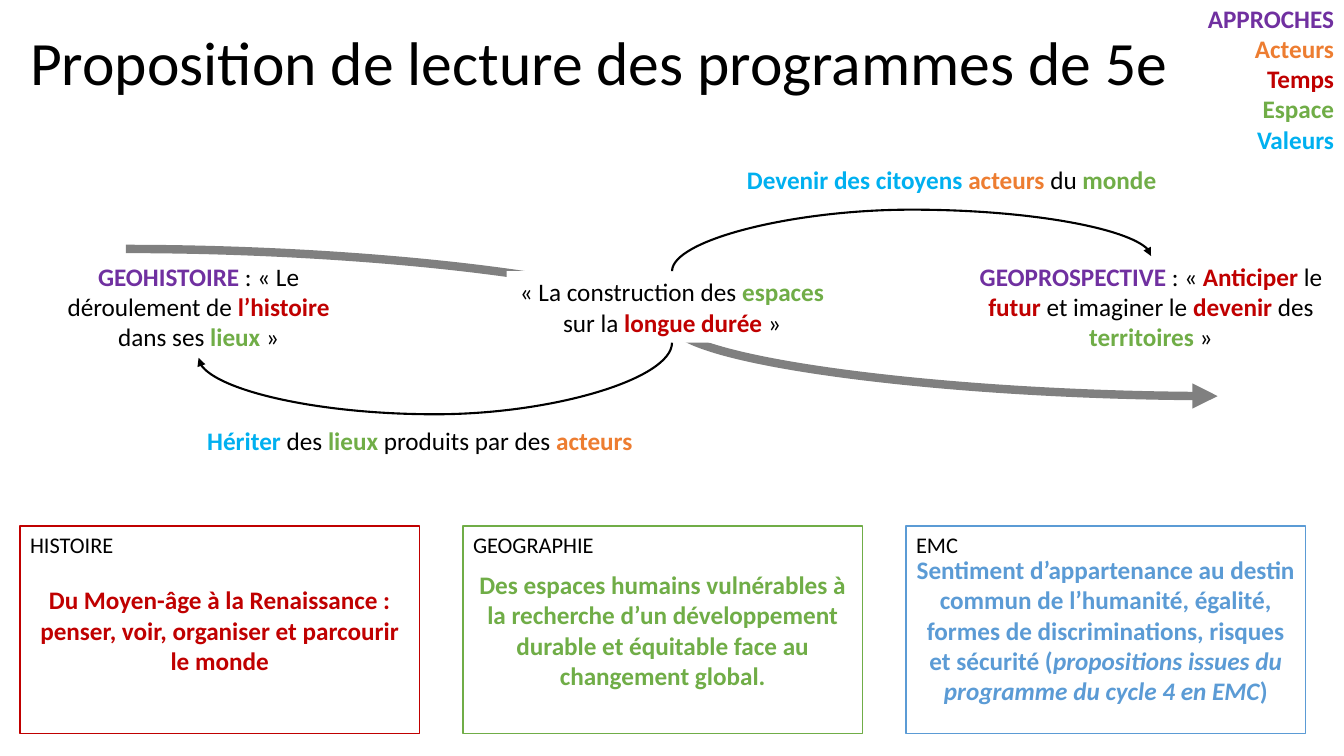
import pptx
import pptx.util
import pptx.dml.color
import pptx.enum.shapes
import pptx.enum.text
import pptx.oxml.ns
from lxml import etree

RGB = pptx.dml.color.RGBColor
BLACK = RGB(0, 0, 0)
WHITE = RGB(255, 255, 255)
GREY = RGB(0x80, 0x80, 0x80)
PURPLE = RGB(0x70, 0x30, 0xA0)
RED = RGB(0xC0, 0, 0)
GREEN = RGB(0x70, 0xAD, 0x47)
ORANGE = RGB(0xED, 0x7D, 0x31)
CYAN = RGB(0, 0xB0, 0xF0)
BLUE = RGB(0x5B, 0x9B, 0xD5)

ALIGN = pptx.enum.text.PP_ALIGN
MIDDLE = pptx.enum.text.MSO_ANCHOR.MIDDLE
TOP = pptx.enum.text.MSO_ANCHOR.TOP
RECT = pptx.enum.shapes.MSO_SHAPE.RECTANGLE
CURVE = pptx.enum.shapes.MSO_CONNECTOR.CURVE
FONT = "Calibri"
CELL = pptx.util.Inches(0.1)
COLS, ROWS = 133.33, 75

CARDS = [
    ("HISTOIRE", RED, [
        ("Du Moyen-âge à la Renaissance : penser, voir, organiser et parcourir le monde", False)]),
    ("GEOGRAPHIE", GREEN, [
        ("Des espaces humains vulnérables à la recherche d’un développement durable "
         "et équitable face au changement global.", False)]),
    ("EMC", BLUE, [
        ("Sentiment d’appartenance au destin commun de l’humanité, égalité, "
         "formes de discriminations, risques et sécurité (", False),
        ("propositions issues du programme du cycle 4 en EMC", True),
        (")", False)]),
]
THEMES = [("APPROCHES", PURPLE), ("Acteurs", ORANGE), ("Temps", RED),
          ("Espace", GREEN), ("Valeurs", CYAN)]
PAST = [("GEOHISTOIRE", PURPLE), (" : « Le déroulement de ", BLACK), ("l’histoire", RED),
        (" dans ses ", BLACK), ("lieux", GREEN), (" »", BLACK)]
NOW = [("« La construction des ", BLACK), ("espaces", GREEN), (" sur la ", BLACK),
       ("longue durée", RED), (" »", BLACK)]
NEXT = [("GEOPROSPECTIVE", PURPLE), (" : « ", BLACK), ("Anticiper", RED), (" le ", BLACK),
        ("futur", RED), (" et imaginer le ", BLACK), ("devenir", RED), (" des ", BLACK),
        ("territoires", GREEN), (" »", BLACK)]
BACK = [("Hériter", CYAN), (" des ", BLACK), ("lieux", GREEN),
        (" produits par des ", BLACK), ("acteurs", ORANGE)]
AHEAD = [("Devenir des citoyens ", CYAN), ("acteurs", ORANGE), (" du ", BLACK),
         ("monde", GREEN)]


def grid(*cells):
    """Turn grid cells into slide lengths."""
    return [round(c * CELL) for c in cells]


def style(para, size, align):
    """Set the font, size and alignment of a paragraph."""
    para.font.name = FONT
    para.font.size = pptx.util.Pt(size)
    para.alignment = align


def write(para, runs):
    """Add coloured runs, bold wherever the colour is not black."""
    for text, hue in runs:
        run = para.add_run()
        run.text = text
        run.font.color.rgb = hue
        run.font.bold = hue != BLACK


def label(slide, box, lines, size=18, align=ALIGN.CENTER, anchor=TOP):
    """Place a wrapped text box with one paragraph per line."""
    frame = slide.shapes.add_textbox(*grid(*box)).text_frame
    frame.word_wrap = True
    frame.vertical_anchor = anchor
    for i, runs in enumerate(lines):
        para = frame.add_paragraph() if i else frame.paragraphs[0]
        style(para, size, align)
        write(para, runs)
    return frame


def panel(slide, box, hue=None):
    """Place a white rectangle with an optional outline."""
    rect = slide.shapes.add_shape(RECT, *grid(*box))
    rect.shadow.inherit = False
    rect.fill.solid()
    rect.fill.fore_color.rgb = WHITE
    if hue is None:
        rect.line.fill.background()
    else:
        rect.line.color.rgb = hue
        rect.line.width = pptx.util.Pt(1)
    rect.text_frame.word_wrap = True
    return rect.text_frame


def arrow(slide, start, end, hue, width):
    """Draw a curved arrow between two grid points."""
    link = slide.shapes.add_connector(CURVE, *grid(*start, *end))
    link.line.color.rgb = hue
    link.line.width = pptx.util.Pt(width)
    qn = pptx.oxml.ns.qn
    etree.SubElement(link.line._get_or_add_ln(), qn("a:tailEnd"), type="triangle")
    etree.SubElement(link._element.spPr, qn("a:effectLst"))
    return link


def arc(slide, start, end, sag):
    """Draw a quarter-turned arrow that bulges by sag beyond its start."""
    (ax, ay), (bx, by) = start, end
    midx, midy = (ax + bx) / 2, (ay + by) / 2
    wide, tall = by - ay, ax - bx
    link = arrow(slide, (midx - wide / 2, midy - tall / 2),
                 (midx + wide / 2, midy + tall / 2), BLACK, 1.5)
    props = link._element.spPr
    props.find(pptx.oxml.ns.qn("a:xfrm")).set("rot", str(90 * 60000))
    bend = props.find(pptx.oxml.ns.qn("a:prstGeom")).get_or_add_avLst()
    etree.SubElement(bend, pptx.oxml.ns.qn("a:gd"), name="adj1",
                     fmla=f"val {round(sag / wide * 100000)}")


def head(slide, box):
    """Write the title in its box."""
    frame = label(slide, box, [[("Proposition de lecture des programmes de 5e", BLACK)]],
                  44, ALIGN.LEFT, MIDDLE)
    frame.paragraphs[0].line_spacing = 0.9


def flow(slide, box):
    """Draw the time arrow, its three stages and the two arcs."""
    x, y, w, h = box
    mid = x + w / 2
    stage, high = y + 9.6, 10.1
    core, deep = y + 11.1, 7.1
    arrow(slide, (x + 12.5, y + 8.9), (x + 120.8, y + 23.5), GREY, 6)
    label(slide, (x + 3.3, stage, 32.8, high), [PAST])
    label(slide, (x + w - 38.3, stage, 38.3, high), [NEXT])
    para = panel(slide, (mid - 16.4, core, 32.8, deep)).paragraphs[0]
    style(para, 18, ALIGN.CENTER)
    write(para, NOW)
    arc(slide, (mid, core + deep), (x + 19.7, stage + high), 7.1)
    arc(slide, (mid, core), (x + w - 19.15, stage), -6.1)
    label(slide, (x + 18.8, y + h - 4, 45.7, 4), [BACK])
    label(slide, (x + 73, y, 42.8, 4), [AHEAD])


def cards(slide, box):
    """Lay out the subject cards in equal columns."""
    x, y, w, h = box
    wide = 39.6
    step = (w - wide) / (len(CARDS) - 1)
    for i, (name, hue, runs) in enumerate(CARDS):
        left = x + i * step
        frame = panel(slide, (left, y, wide, h), hue)
        frame.vertical_anchor = MIDDLE
        para = frame.paragraphs[0]
        style(para, 18, ALIGN.CENTER)
        para.font.bold = True
        para.font.color.rgb = hue
        for text, slant in runs:
            run = para.add_run()
            run.text = text
            run.font.italic = slant
            run.font.color.rgb = hue
        label(slide, (left, y, 15.6, 3.7), [[(name, BLACK)]], 16, ALIGN.LEFT)


def main():
    """Build the slide and save it."""
    deck = pptx.Presentation()
    deck.slide_width, deck.slide_height = grid(COLS, ROWS)
    slide = deck.slides.add_slide(deck.slide_layouts[6])
    head(slide, (2, 0.7, 115, 11.7))
    flow(slide, (0, 15.8, COLS, 29.9))
    label(slide, (COLS - 23, -0.2, 23, 16.2), [[theme] for theme in THEMES],
          align=ALIGN.RIGHT)
    cards(slide, (2, 52.2, 127.5, 20.6))
    deck.save("out.pptx")


if __name__ == "__main__":
    main()
